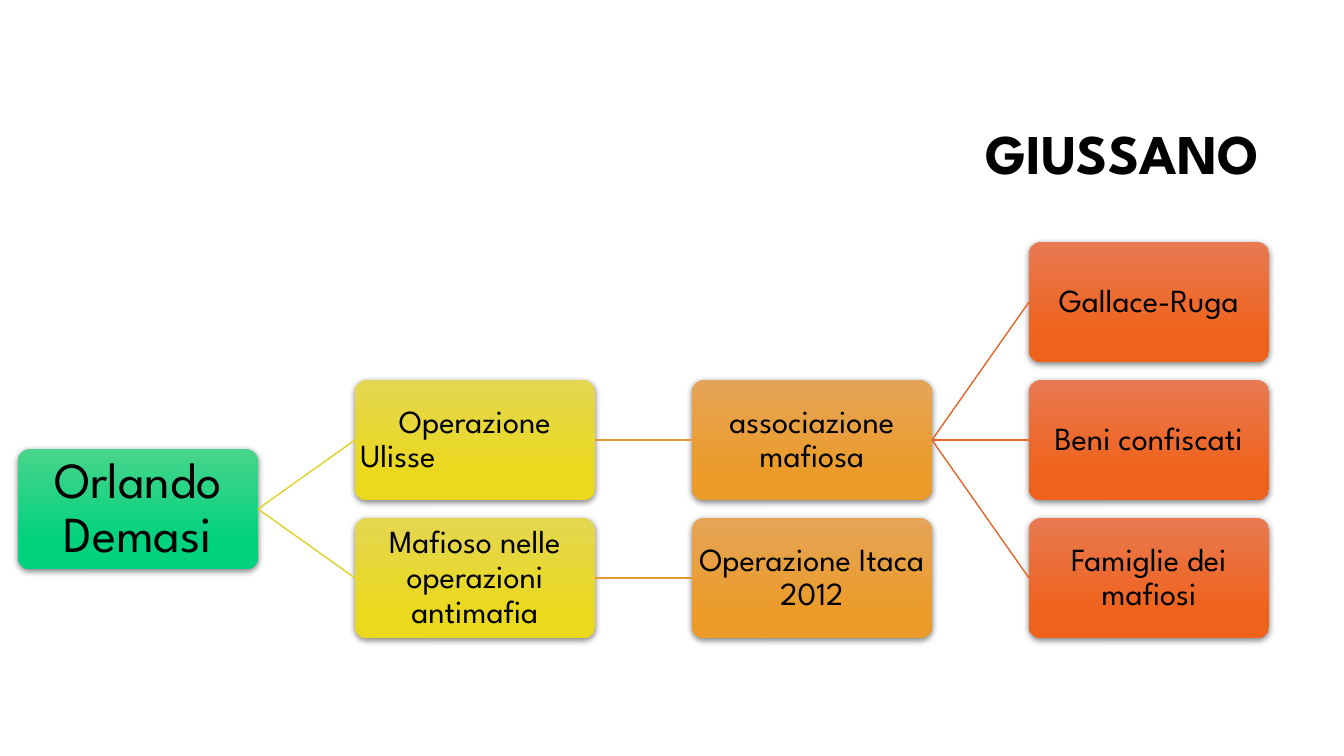
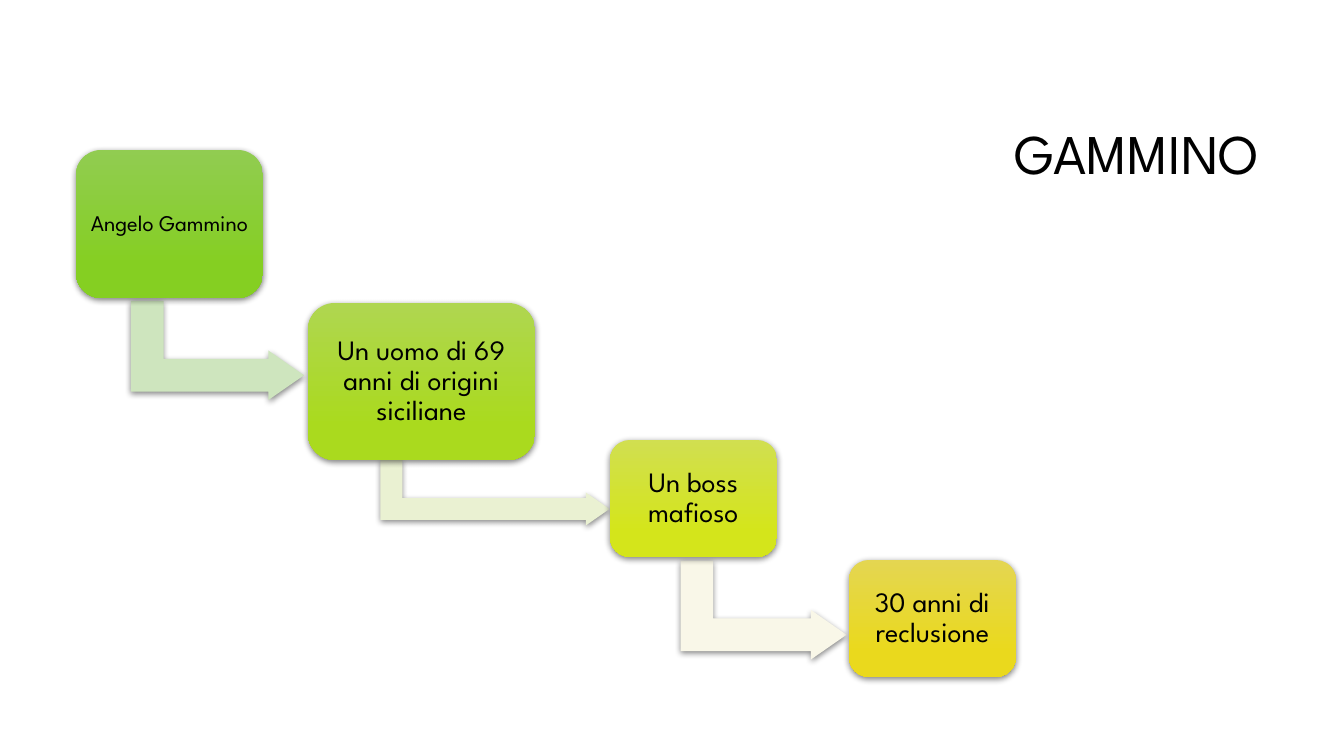
from lxml.etree import SubElement
from pptx import Presentation
from pptx.dml.color import RGBColor
from pptx.enum.shapes import MSO_CONNECTOR, MSO_SHAPE
from pptx.enum.text import MSO_ANCHOR, PP_ALIGN
from pptx.oxml import parse_xml
from pptx.oxml.ns import nsdecls, qn
from pptx.util import Pt

PX = 9072
FONT = "League Spartan"
hex_color = RGBColor.from_string
SHADOW = (
    f'<a:effectLst {nsdecls("a")}>'
    '<a:outerShdw blurRad="57150" dist="19050" dir="5400000" algn="ctr" rotWithShape="0">'
    '<a:srgbClr val="000000"><a:alpha val="48000"/></a:srgbClr>'
    '</a:outerShdw></a:effectLst>'
)


def add_box(page, kind, frame, adjustments, colors):
    shape = page.shapes.add_shape(kind, *(length * PX for length in frame))
    for index, value in enumerate(adjustments):
        shape.adjustments[index] = value
    if len(colors) == 1:
        shape.fill.solid()
        shape.fill.fore_color.rgb = hex_color(colors[0])
    else:
        shape.fill.gradient()
        shape.fill.gradient_angle = 270
        for stop, position, color in zip(shape.fill.gradient_stops, (0, 0.78), colors):
            stop.position = position
            stop.color.rgb = hex_color(color)
    shape.line.fill.background()
    shape._element.spPr.append(parse_xml(SHADOW))
    return shape


def write_text(shape, text, size, inset, alignments, bold=False):
    frame = shape.text_frame
    frame.text = text
    frame.word_wrap = True
    frame.vertical_anchor = MSO_ANCHOR.MIDDLE
    frame.margin_left = frame.margin_right = inset * PX
    frame.margin_top = frame.margin_bottom = inset * PX
    for para, alignment in zip(frame.paragraphs, alignments):
        para.alignment = alignment
        para.line_spacing = 0.9
        for span in para.runs:
            span.font.name = FONT
            span.font.size = Pt(size)
            span.font.bold = bold
            span.font.color.rgb = hex_color("000000")


deck = Presentation()
deck.slide_width, deck.slide_height = 1344 * PX, 756 * PX

pages = []
for heading, bold in (("GIUSSANO", True), ("GAMMINO", False)):
    page = deck.slides.add_slide(deck.slide_layouts[5])
    title = page.shapes.title
    title.left, title.top = 319 * PX, 85 * PX
    title.width, title.height = 950 * PX, 142 * PX
    write_text(title, heading, 40, 10, [PP_ALIGN.RIGHT], bold)
    pages.append(page)
tree_page, stair_page = pages

LEVEL_COLORS = [("48D58B", "00D27D"), ("E4D651", "EAD91D"),
                ("E5A457", "EB9B29"), ("E87951", "EF621C")]
LINK_COLORS = [None, "E1D126", "E29932", "E56526"]
CENTERED = [PP_ALIGN.CENTER]

tree = [
    ("Orlando Demasi", 0, 3, None),
    ("Operazione\nUlisse", 1, 2, 0),
    ("Mafioso nelle operazioni antimafia", 1, 4, 0),
    ("associazione mafiosa", 2, 2, 1),
    ("Operazione Itaca 2012", 2, 4, 2),
    ("Gallace-Ruga", 3, 0, 3),
    ("Beni confiscati", 3, 2, 3),
    ("Famiglie dei mafiosi", 3, 4, 3),
]
nodes = []
for text, level, half_row, parent in tree:
    frame = (18 + 337 * level, 242 + 69 * half_row, 240, 120)
    node = add_box(tree_page, MSO_SHAPE.ROUNDED_RECTANGLE, frame, [0.1], LEVEL_COLORS[level])
    write_text(node, text, 23 if level else 36, 2, [PP_ALIGN.CENTER, PP_ALIGN.LEFT])
    nodes.append(node)
    if parent is not None:
        link = tree_page.shapes.add_connector(MSO_CONNECTOR.STRAIGHT, 0, 0, 0, 0)
        link.begin_connect(nodes[parent], 3)
        link.end_connect(node, 1)
        link.line.color.rgb = hex_color(LINK_COLORS[level])
        link.line.width = Pt(1)
        SubElement(link._element.spPr, qn("a:effectLst"))

steps = [
    ("Angelo Gammino", 16, (76, 150, 187, 148), ("91CC51", "85CF22"),
     (168, 264, 99, 173), "CEE5BE"),
    ("Un uomo di 69 anni di origini siciliane", 20, (308, 303, 227, 157), ("AFD650", "AADA1E"),
     (462, 378, 66, 229), "EAF1D2"),
    ("Un boss mafioso", 20, (610, 440, 167, 117), ("D1DF50", "D4E51B"),
     (714, 527, 99, 166), "F9F7E8"),
    ("30 anni di reclusione", 20, (849, 560, 167, 117), ("E4D651", "EAD91D"), None, None),
]
for text, size, frame, colors, arrow_frame, arrow_color in steps:
    if arrow_frame:
        arrow = add_box(stair_page, MSO_SHAPE.BENT_UP_ARROW, arrow_frame,
                        [0.33, 0.25, 0.36], [arrow_color])
        arrow.rotation = 90
    step = add_box(stair_page, MSO_SHAPE.ROUNDED_RECTANGLE, frame, [0.17], colors)
    write_text(step, text, size, 7, CENTERED)

deck.save("out.pptx")
